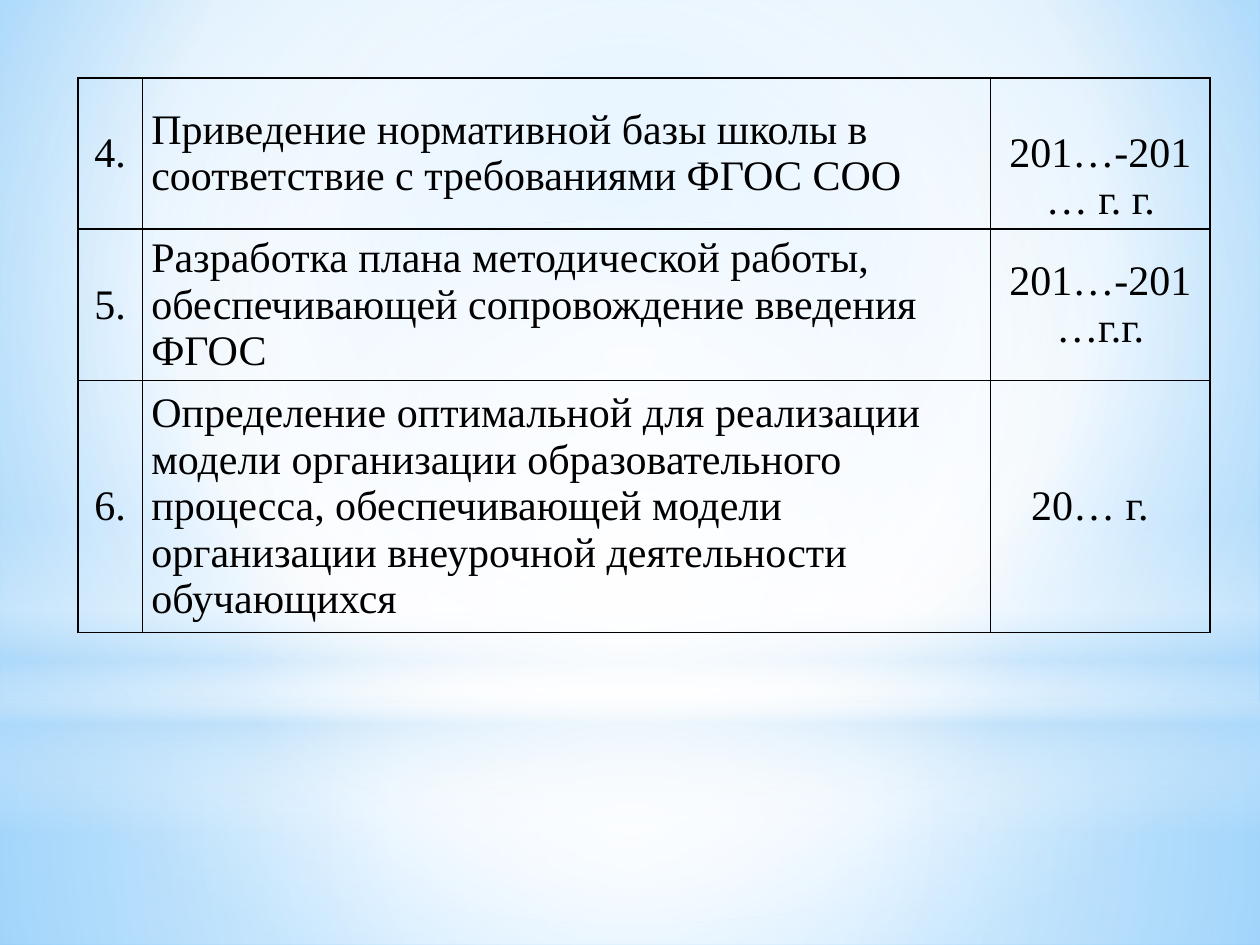
"""Build a slide with a table of school plan steps on a soft blue backdrop."""
import pptx
import pptx.util
import pptx.dml.color
import pptx.enum.shapes
import pptx.enum.text
import pptx.oxml
import pptx.oxml.ns

Cm = pptx.util.Cm
Pt = pptx.util.Pt
qn = pptx.oxml.ns.qn
Kind = pptx.enum.shapes.MSO_SHAPE
Align = pptx.enum.text.PP_ALIGN

COLORS = {
    "text": "000000",
    "white": "FFFFFF",
    "pale": "B4DCFA",
    "sky": "9ED5FF",
    "blue": "5BB9FF",
}
FONT = "Times New Roman"
WIDE = 25.4
CENTER = (50, 50, 50, 50)
COLS = (1.3, 17.1, 4.42)
ROWS = (3.05, 3.05, 5.08)
STEPS = (
    ("4.", "Приведение нормативной базы школы в соответствие с требованиями ФГОС СОО",
     "201…-201… г. г."),
    ("5.", "Разработка плана методической работы, обеспечивающей сопровождение введения ФГОС",
     "201…-201…г.г."),
    ("6.", "Определение оптимальной для реализации модели организации образовательного "
     "процесса, обеспечивающей модели организации внеурочной деятельности обучающихся",
     "20… г."),
)


def blend(fill, root, stops, focus=None):
    """Fill with a gradient: round when a focus is given, else top to bottom."""
    fill.gradient()
    grad = root.find(".//" + qn("a:gradFill"))
    for child in list(grad):
        grad.remove(child)
    items = "".join(
        f'<a:gs pos="{pos * 1000}"><a:srgbClr val="{COLORS[name]}">'
        f'<a:alpha val="{alpha * 1000}"/></a:srgbClr></a:gs>'
        for pos, name, alpha in stops)
    if focus:
        sides = " ".join(f'{side}="{val * 1000}"' for side, val in zip("ltrb", focus))
        shade = f'<a:path path="circle"><a:fillToRect {sides}/></a:path>'
    else:
        shade = '<a:lin ang="5400000" scaled="0"/>'
    space = pptx.oxml.ns.nsdecls("a")
    fresh = pptx.oxml.parse_xml(
        f'<a:gradFill {space} rotWithShape="1"><a:gsLst>{items}</a:gsLst>{shade}</a:gradFill>')
    for child in list(fresh):
        grad.append(child)


def add_glow(slide, kind, top, high, stops, focus=None):
    """Add a full-width band of faded light."""
    shape = slide.shapes.add_shape(kind, 0, Cm(top), Cm(WIDE), Cm(high))
    shape.shadow.inherit = False
    shape.line.fill.background()
    blend(shape.fill, shape.element, stops, focus)


def add_scene(slide):
    """Paint the background and its four layers of light."""
    blend(slide.background.fill, slide.element,
          [(0, "sky", 100), (60, "white", 100), (100, "blue", 100)], (20, 10, 20, 60))
    add_glow(slide, Kind.RECTANGLE, 14.17, 4.88,
             [(0, "white", 91), (37, "white", 76), (100, "pale", 79)], CENTER)
    add_glow(slide, Kind.RECTANGLE, 0, 14.17,
             [(0, "white", 89), (48, "white", 62), (100, "pale", 79)], CENTER)
    add_glow(slide, Kind.RECTANGLE, 10.46, 6.35,
             [(0, "white", 0), (29, "white", 30), (45, "pale", 40),
              (55, "white", 26), (65, "pale", 60), (100, "white", 0)])
    add_glow(slide, Kind.OVAL, 4.45, 14.17,
             [(0, "white", 100), (56, "white", 0)], CENTER)


def add_edges(cell):
    """Draw a thin line on each side of a cell."""
    props = cell._tc.get_or_add_tcPr()
    space = pptx.oxml.ns.nsdecls("a")
    for spot, side in enumerate("LRTB"):
        props.insert(spot, pptx.oxml.parse_xml(
            f'<a:ln{side} {space} w="12700"><a:solidFill><a:srgbClr val="{COLORS["text"]}"/>'
            f'</a:solidFill></a:ln{side}>'))


def set_cell(cell, text, align):
    """Write and format one cell."""
    cell.fill.background()
    add_edges(cell)
    cell.margin_left = cell.margin_right = Cm(0.18)
    cell.margin_top = cell.margin_bottom = 0
    cell.vertical_anchor = pptx.enum.text.MSO_ANCHOR.MIDDLE
    para = cell.text_frame.paragraphs[0]
    para.text = text
    para.alignment = align
    font = para.runs[0].font
    font.name = FONT
    font.size = Pt(24)
    font.color.rgb = pptx.dml.color.RGBColor.from_string(COLORS["text"])


def add_steps(slide):
    """Add the table of steps and dates."""
    frame = slide.shapes.add_table(len(ROWS), len(COLS), Cm(1.57), Cm(1.57),
                                   Cm(sum(COLS)), Cm(sum(ROWS)))
    table = frame.table
    table.first_row = table.horz_banding = False
    for col, width in zip(table.columns, COLS):
        col.width = Cm(width)
    for row, high, step in zip(table.rows, ROWS, STEPS):
        row.height = Cm(high)
        for cell, text, align in zip(row.cells, step, (Align.CENTER, Align.LEFT, Align.CENTER)):
            set_cell(cell, text, align)
    table.cell(0, 2).margin_top = Cm(0.94)
    table.cell(2, 2).margin_right = Cm(0.6)


def main():
    """Build and save the slide."""
    deck = pptx.Presentation()
    deck.slide_width = Cm(WIDE)
    deck.slide_height = Cm(19.05)
    slide = deck.slides.add_slide(deck.slide_layouts[6])
    add_scene(slide)
    add_steps(slide)
    deck.save("out.pptx")


if __name__ == "__main__":
    main()
